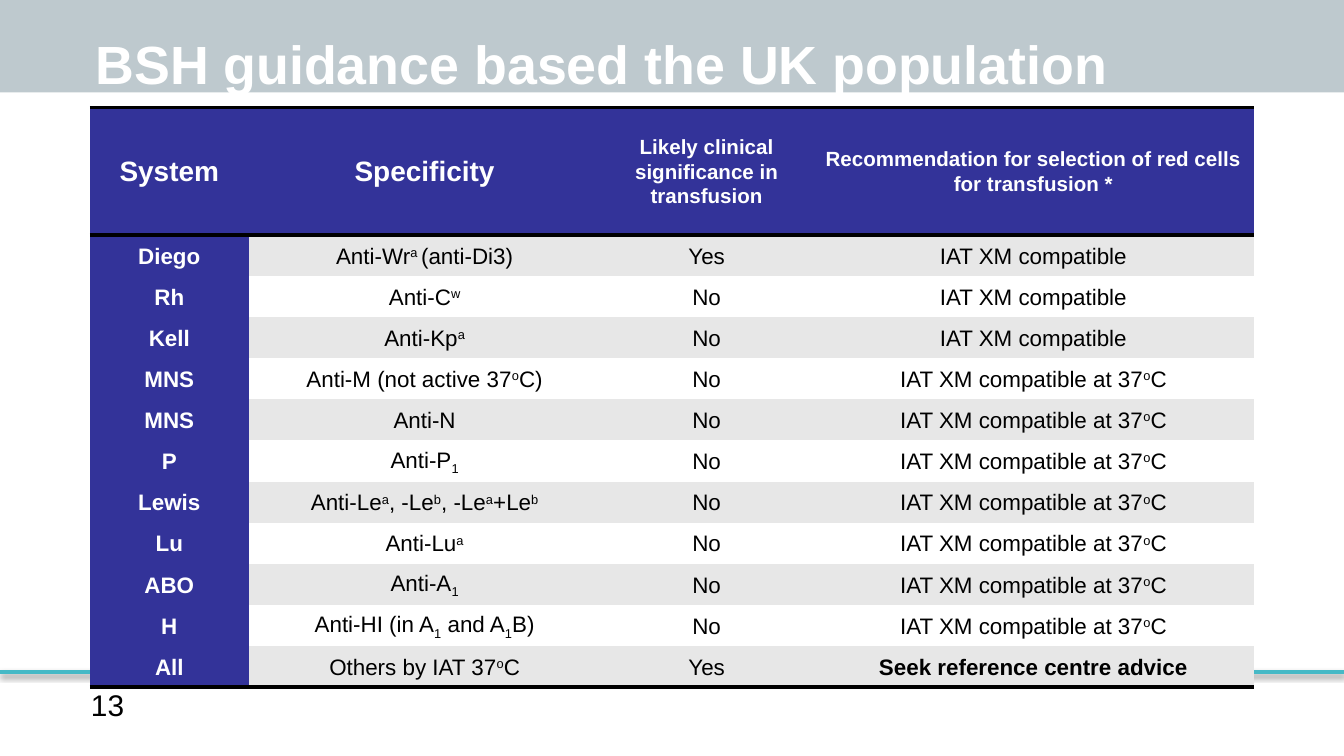
from pptx import Presentation
from pptx.dml.color import RGBColor
from pptx.enum.shapes import MSO_CONNECTOR, MSO_SHAPE
from pptx.enum.text import MSO_ANCHOR, MSO_AUTO_SIZE, PP_ALIGN
from pptx.oxml import parse_xml
from pptx.oxml.ns import nsdecls
from pptx.util import Cm, Pt

RECT = MSO_SHAPE.RECTANGLE
LINE = MSO_CONNECTOR.STRAIGHT
MIDDLE = MSO_ANCHOR.MIDDLE
LEFT, CENTER = PP_ALIGN.LEFT, PP_ALIGN.CENTER
NO_FIT = MSO_AUTO_SIZE.NONE

WHITE = RGBColor(0xFF, 0xFF, 0xFF)
BLACK = RGBColor(0x00, 0x00, 0x00)
SLATE = RGBColor(0x46, 0x66, 0x73)
TEAL = RGBColor(0x46, 0xB9, 0xC6)
NAVY = RGBColor(0x33, 0x33, 0x99)
GREY = RGBColor(0xE7, 0xE7, 0xE7)

NO_GRID = "{2D5ABB26-0587-4C30-8999-92F81FD0307C}"
SHIFTS = {"^": "30000", "_": "-25000"}

# "|" parts the runs; a leading ^ or _ raises or lowers a run
XM = "IAT XM compatible"
WARM = XM + " at 37|^o|C"
HEADS = ["System", "Specificity", "Likely clinical significance in transfusion",
         "Recommendation for selection of red cells for transfusion *"]
ROWS = [
    ["Diego", "Anti-Wr|^a |(anti-Di3)", "Yes", XM],
    ["Rh", "Anti-C|^w", "No", XM],
    ["Kell", "Anti-Kp|^a", "No", XM],
    ["MNS", "Anti-M (not active 37|^o|C)", "No", WARM],
    ["MNS", "Anti-N", "No", WARM],
    ["P", "Anti-P|_1", "No", WARM],
    ["Lewis", "Anti-Le|^a|, -Le|^b|, -Le|^a|+Le|^b", "No", WARM],
    ["Lu", "Anti-Lu|^a", "No", WARM],
    ["ABO", "Anti-A|_1", "No", WARM],
    ["H", "Anti-HI (in A|_1| and A|_1|B)", "No", WARM],
    ["All", "Others by IAT 37|^o|C", "Yes", "Seek reference centre advice"],
]
WIDTHS = [3, 6.65, 4.01, 8.34]
HEAD_H, TABLE_H = 2.41, 10.96


def apply(item, form):
    for key, value in form.items():
        setattr(item, key, value)


class Page:
    """Holds the style and the current slide."""

    font = "Arial"

    def __init__(self, deck):
        self.slide = deck.slides.add_slide(deck.slide_layouts[5])
        self.shapes = self.slide.shapes

    def words(self, para, text, size, color, bold=False, align=LEFT):
        para.alignment = align
        for part in text.split("|"):
            shift = SHIFTS.get(part[0])
            run = para.add_run()
            run.text = part[1:] if shift else part
            apply(run.font, {"name": self.font, "size": Pt(size), "bold": bold})
            run.font.color.rgb = color
            if shift:
                run._r.get_or_add_rPr().set("baseline", shift)

    def band(self, x, y, w, h, color, alpha):
        box = self.shapes.add_shape(RECT, Cm(x), Cm(y), Cm(w), Cm(h))
        box.shadow.inherit = False
        box.line.fill.background()
        box.fill.solid()
        box.fill.fore_color.rgb = color
        tint = box._element.spPr.find(".//{*}srgbClr")
        tint.append(parse_xml(f'<a:alpha {nsdecls("a")} val="{alpha * 1000}"/>'))

    def rule(self, x, y, end, color, width):
        line = self.shapes.add_connector(LINE, Cm(x), Cm(y), Cm(end), Cm(y))
        line.line.color.rgb = color
        line.line.width = Pt(width)
        line._element.spPr.append(parse_xml(
            f'<a:effectLst {nsdecls("a")}><a:outerShdw blurRad="{Pt(3.1)}" '
            f'dist="{Pt(1.6)}" dir="5400000" rotWithShape="0">'
            '<a:srgbClr val="000000"><a:alpha val="38000"/></a:srgbClr>'
            '</a:outerShdw></a:effectLst>'))

    def title(self, text, x, y, w, h):
        box = self.shapes.title
        self.shapes._spTree.append(box._element)  # in front of the band
        apply(box, {"left": Cm(x), "top": Cm(y), "width": Cm(w), "height": Cm(h)})
        apply(box.text_frame, {"vertical_anchor": MIDDLE, "word_wrap": True,
                               "auto_size": NO_FIT})
        self.words(box.text_frame.paragraphs[0], text, 28.8, WHITE, True)

    def label(self, text, x, y, w, h):
        box = self.shapes.add_textbox(Cm(x), Cm(y), Cm(w), Cm(h))
        box.text_frame.word_wrap = True
        self.words(box.text_frame.paragraphs[0], text, 16, BLACK)

    def edge(self, cell, side):
        cell._tc.get_or_add_tcPr().insert(0, parse_xml(
            f'<a:{side} {nsdecls("a")} w="{Pt(2)}"><a:solidFill>'
            f'<a:srgbClr val="{BLACK}"/></a:solidFill></a:{side}>'))

    def cell(self, cell, text, fill, size, color, bold):
        apply(cell, {"vertical_anchor": MIDDLE, "margin_left": Cm(0.18),
                     "margin_right": Cm(0.18), "margin_top": 0,
                     "margin_bottom": 0})
        cell.fill.solid()
        cell.fill.fore_color.rgb = fill
        para = cell.text_frame.paragraphs[0]
        para.line_spacing = 1.07
        self.words(para, text, size, color, bold, CENTER)

    def table(self, x, y):
        last = len(ROWS)
        frame = self.shapes.add_table(last + 1, len(HEADS), Cm(x), Cm(y),
                                      Cm(sum(WIDTHS)), Cm(TABLE_H))
        grid = frame.table
        grid._tbl.tblPr.find("{*}tableStyleId").text = NO_GRID
        apply(grid, {"first_row": False, "horz_banding": False})
        for col, width in zip(grid.columns, WIDTHS):
            col.width = Cm(width)
        for r, texts in enumerate([HEADS] + ROWS):
            grid.rows[r].height = Cm((TABLE_H - HEAD_H) / last if r else HEAD_H)
            for c, text in enumerate(texts):
                cell = grid.cell(r, c)
                head = r == 0 or c == 0
                fill = NAVY if head else GREY if r % 2 else WHITE
                size = 12 if r else 15 if c < 2 else 11
                bold = head or (r == last and c == 3)
                self.cell(cell, text, fill, size, WHITE if head else BLACK, bold)
                if r in (0, last):
                    self.edge(cell, "lnB")
                if r == 0:
                    self.edge(cell, "lnT")


def main():
    deck = Presentation()
    apply(deck, {"slide_width": Cm(25.4), "slide_height": Cm(14.29)})
    page = Page(deck)
    # Backdrop and page number
    page.label("13", 1.47, 12.85, 4.88, 0.94)
    page.band(0, 0, 25.4, 1.75, SLATE, 35)
    page.rule(0, 12.7, 25.4, TEAL, 2)
    # Title and table
    page.title("BSH guidance based the UK population", 1.55, 0, 20.32, 2.39)
    page.table(1.7, 2.03)
    deck.save("out.pptx")


if __name__ == "__main__":
    main()
